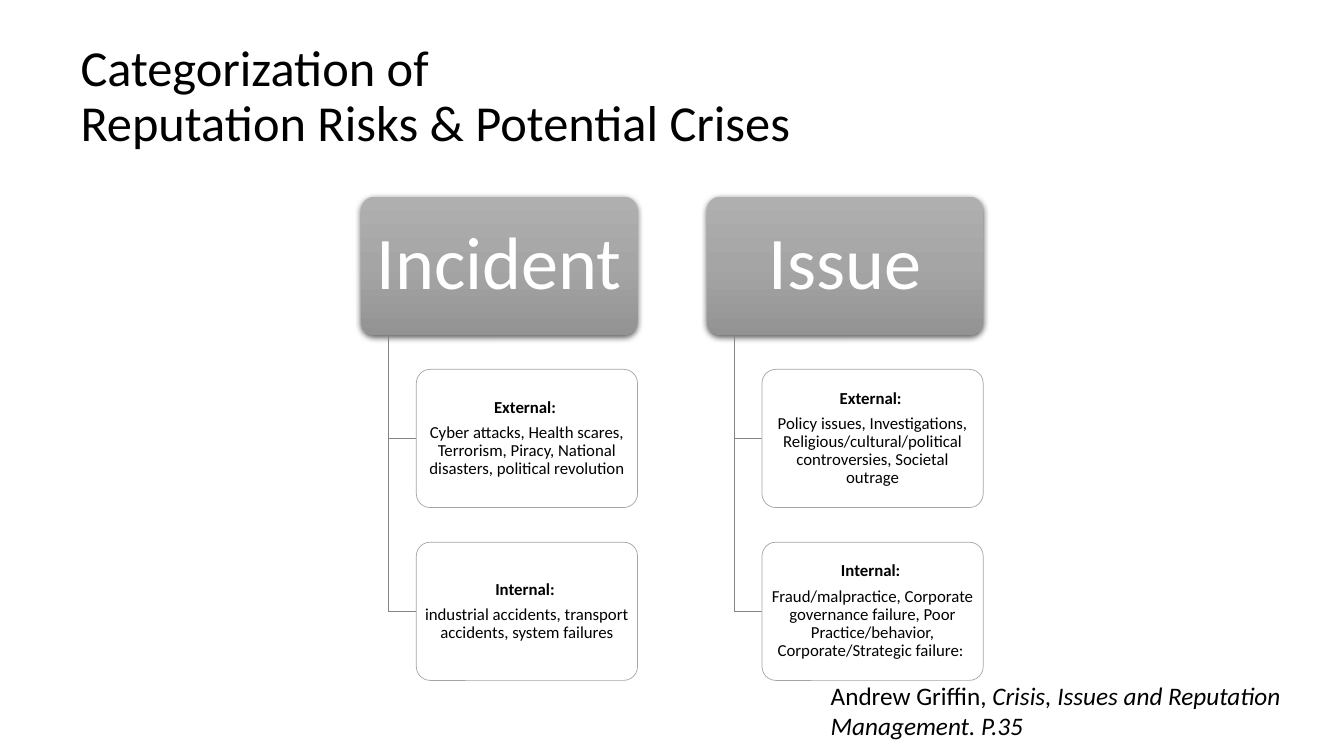
from dataclasses import dataclass
from typing import Any

from pptx import Presentation, oxml, util as u
from pptx.dml import color
from pptx.enum import shapes, text
from pptx.oxml import ns


@dataclass(frozen=True)
class Theme:
    font: str = "Calibri"
    ink: str = "000000"
    paper: str = "FFFFFF"
    edge: str = "A5A5A5"
    spine: str = "848484"
    fade: tuple[str, ...] = ("AFAFAF", "A5A5A5", "939393")
    title: int = 36
    head: int = 53
    body: int = 12
    note: int = 18


@dataclass(frozen=True)
class Box:
    left: int
    top: int
    width: int
    height: int

    def args(self) -> tuple[int, int, int, int]:
        return self.left, self.top, self.width, self.height


@dataclass(frozen=True)
class Card:
    label: str
    body: str


@dataclass(frozen=True)
class Branch:
    head: str
    cards: tuple[Card, ...]


THEME = Theme()
WIDE, HIGH = u.Inches(13.33), u.Inches(7.5)
ROWS = 14
UNIT = HIGH * 0.64 / ROWS
LEFT, TOP = WIDE * 0.2686, HIGH * 0.26
TALL, STEP = 4, 5
SPAN, PITCH = 8, 10
STEM, INDENT = 0.8, 1.6

BRANCHES = (
    Branch("Incident", (
        Card("External: ", "Cyber attacks, Health scares, Terrorism, Piracy, "
                           "National disasters, political revolution"),
        Card("Internal: ", "industrial accidents, transport accidents, system failures"),
    )),
    Branch("Issue", (
        Card("External: ", "Policy issues, Investigations, Religious/cultural/political "
                           "controversies, Societal outrage"),
        Card("Internal: ", "Fraud/malpractice, Corporate governance failure, Poor "
                           "Practice/behavior, Corporate/Strategic failure: "),
    )),
)


def share(left: float, top: float, width: float, height: float) -> Box:
    return Box(round(WIDE * left / 100), round(HIGH * top / 100),
               round(WIDE * width / 100), round(HIGH * height / 100))


def cell(col: float, row: float, span: float, tall: float) -> Box:
    return Box(round(LEFT + col * UNIT), round(TOP + row * UNIT),
               round(span * UNIT), round(tall * UNIT))


def apply(item: Any, form: dict[str, Any]) -> None:
    for key, value in form.items():
        setattr(item, key, value)


def paint(tone: Any, shade: str) -> None:
    tone.rgb = color.RGBColor.from_string(shade)


def write(para: Any, words: str, size: int, shade: str, **form: Any) -> None:
    run = para.add_run()
    run.text = words
    apply(run.font, {"name": THEME.font, "size": u.Pt(size), **form})
    paint(run.font.color, shade)


def frame(shape: Any, side: float, edge: float) -> Any:
    body = shape.text_frame
    apply(body, {
        "word_wrap": True, "vertical_anchor": text.MSO_ANCHOR.MIDDLE,
        "margin_left": u.Inches(side), "margin_right": u.Inches(side),
        "margin_top": u.Inches(edge), "margin_bottom": u.Inches(edge),
    })
    return body


def block(slide: Any, box: Box) -> Any:
    shape = slide.shapes.add_shape(shapes.MSO_SHAPE.ROUNDED_RECTANGLE, *box.args())
    shape.adjustments[0] = 0.1
    shape.shadow.inherit = False
    return shape


def draw_head(slide: Any, box: Box, words: str) -> None:
    shape = block(slide, box)
    shape.line.fill.background()
    props = shape.element.spPr
    stops = "".join(f'<a:gs pos="{i * 50000}"><a:srgbClr val="{shade}"/></a:gs>'
                    for i, shade in enumerate(THEME.fade))
    props.find(ns.qn("a:prstGeom")).addnext(oxml.parse_xml(
        f'<a:gradFill {ns.nsdecls("a")}><a:gsLst>{stops}</a:gsLst>'
        '<a:lin ang="5400000" scaled="0"/></a:gradFill>'))
    props.find(ns.qn("a:effectLst")).append(oxml.parse_xml(
        f'<a:outerShdw {ns.nsdecls("a")} blurRad="{u.Pt(4.5)}" dist="{u.Pt(1.5)}" '
        f'dir="5400000" rotWithShape="0"><a:srgbClr val="{THEME.ink}">'
        '<a:alpha val="63000"/></a:srgbClr></a:outerShdw>'))
    para = frame(shape, 0.11, 0.07).paragraphs[0]
    apply(para, {"alignment": text.PP_ALIGN.CENTER, "line_spacing": 0.9})
    write(para, words, THEME.head, THEME.paper)


def draw_card(slide: Any, box: Box, card: Card) -> None:
    shape = block(slide, box)
    shape.fill.solid()
    paint(shape.fill.fore_color, THEME.paper)
    tone = shape.element.spPr.find(ns.qn("a:solidFill"))[0]
    tone.append(oxml.parse_xml(f'<a:alpha {ns.nsdecls("a")} val="90000"/>'))
    paint(shape.line.color, THEME.edge)
    shape.line.width = u.Pt(0.5)
    body = frame(shape, 0.03, 0.02)
    pairs = ((body.paragraphs[0], card.label, True), (body.add_paragraph(), card.body, False))
    for para, words, bold in pairs:
        apply(para, {"alignment": text.PP_ALIGN.CENTER, "line_spacing": 0.9,
                     "space_after": u.Pt(5)})
        write(para, words, THEME.body, THEME.ink, bold=bold)


def draw_elbow(slide: Any, box: Box) -> None:
    base, end = box.top + box.height, box.left + box.width
    pen = slide.shapes.build_freeform(box.left, box.top)
    pen.add_line_segments([(box.left, base), (end, base)], close=False)
    shape = pen.convert_to_shape()
    shape.shadow.inherit = False
    shape.fill.background()
    paint(shape.line.color, THEME.spine)
    shape.line.width = u.Pt(1)


def draw_branch(slide: Any, col: float, branch: Branch) -> None:
    draw_head(slide, cell(col, 0, SPAN, TALL), branch.head)
    for i, card in enumerate(branch.cards, 1):
        row = i * STEP
        draw_elbow(slide, cell(col + STEM, TALL, INDENT - STEM, row - TALL / 2))
        draw_card(slide, cell(col + INDENT, row, SPAN - INDENT, TALL), card)


def draw_title(slide: Any) -> None:
    shape = slide.shapes.add_textbox(*share(5.25, 4.67, 89.5, 16.53).args())
    para = frame(shape, 0.1, 0.05).paragraphs[0]
    para.line_spacing = 0.9
    write(para, "Categorization of ", THEME.title, THEME.ink)
    para.add_line_break()
    write(para, "Reputation Risks & Potential Crises", THEME.title, THEME.ink)


def draw_note(slide: Any) -> None:
    shape = slide.shapes.add_textbox(*share(61.07, 89.33, 35.18, 9.47).args())
    body = frame(shape, 0.1, 0.05)
    apply(body, {"vertical_anchor": text.MSO_ANCHOR.TOP,
                 "auto_size": text.MSO_AUTO_SIZE.SHAPE_TO_FIT_TEXT})
    para = body.paragraphs[0]
    para.space_after = u.Pt(6)
    write(para, "Andrew Griffin, ", THEME.note, THEME.ink)
    write(para, "Crisis, Issues and Reputation Management. P.35",
          THEME.note, THEME.ink, italic=True)


def main() -> None:
    deck = Presentation()
    apply(deck, {"slide_width": WIDE, "slide_height": HIGH})
    slide = deck.slides.add_slide(deck.slide_layouts[6])
    draw_title(slide)
    draw_note(slide)
    for i, branch in enumerate(BRANCHES):
        draw_branch(slide, i * PITCH, branch)
    deck.save("out.pptx")


if __name__ == "__main__":
    main()
